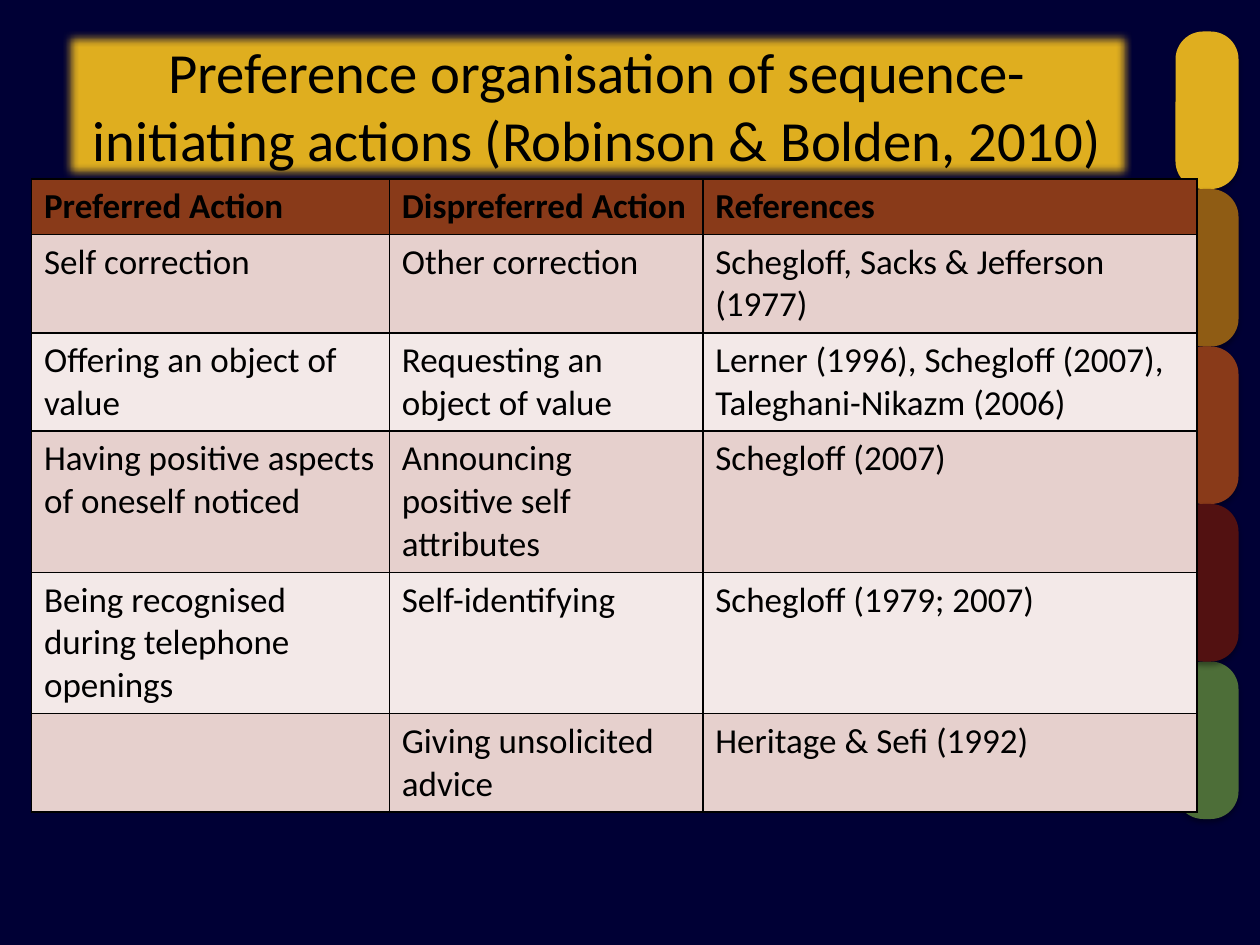
from dataclasses import dataclass

from lxml import etree
from pptx import Presentation
from pptx.dml.color import RGBColor
from pptx.enum.shapes import MSO_SHAPE
from pptx.enum.text import MSO_ANCHOR, MSO_AUTO_SIZE, PP_ALIGN
from pptx.oxml.ns import qn
from pptx.util import Inches, Pt

ROUNDED = MSO_SHAPE.ROUNDED_RECTANGLE
MIDDLE = MSO_ANCHOR.MIDDLE
NO_AUTOFIT = MSO_AUTO_SIZE.NONE
CENTER = PP_ALIGN.CENTER
TITLE_ONLY = 5
UNIT = 0.25  # inches in one column or row of the page grid


@dataclass(frozen=True)
class Theme:
    font: str = "Calibri"
    title_size: float = 32.4
    table_size: float = 20
    night: str = "000035"
    ink: str = "000000"
    gold: str = "DFAE1F"
    bronze: str = "8F5C14"
    rust: str = "893A19"
    maroon: str = "521111"
    green: str = "4D6E38"
    bands: tuple = ("E6D0CD", "F3E9E8")


THEME = Theme()

TITLE = "Preference organisation of sequence-initiating actions (Robinson & Bolden, 2010)"
COLUMN_SHARES = (0.307, 0.269, 0.424)
# Each row: the number of text lines it holds, then its cells
ACTIONS = [
    (1, ("Preferred Action", "Dispreferred Action", "References")),
    (2, ("Self correction", "Other correction", "Schegloff, Sacks & Jefferson (1977)")),
    (2, ("Offering an object of value", "Requesting an object of value",
         "Lerner (1996), Schegloff (2007), Taleghani-Nikazm (2006)")),
    (3, ("Having positive aspects of oneself noticed",
         "Announcing positive self attributes", "Schegloff (2007)")),
    (3, ("Being recognised during telephone openings", "Self-identifying",
         "Schegloff (1979; 2007)")),
    (2, ("", "Giving unsolicited advice", "Heritage & Sefi (1992)")),
]


def grid_box(column, row, columns, rows):
    return tuple(Inches(UNIT * cells) for cells in (column, row, columns, rows))


def paint(fill, color):
    fill.solid()
    fill.fore_color.rgb = RGBColor.from_string(color)


def add_element(parent, tag, **attributes):
    return etree.SubElement(parent, qn(tag), attributes)


def add_text(para, text, size, bold=False):
    span = para.add_run()
    span.text = text
    span.font.name = THEME.font
    span.font.size = Pt(size)
    span.font.bold = bold
    span.font.color.rgb = RGBColor.from_string(THEME.ink)


def add_soft_shadow(shape):
    effects = add_element(shape._element.spPr, "a:effectLst")
    shadow = add_element(effects, "a:outerShdw", blurRad=str(Pt(3.1)), dist=str(Pt(1.8)),
                         dir="5400000", rotWithShape="0")
    color = add_element(shadow, "a:srgbClr", val=THEME.ink)
    add_element(color, "a:alpha", val="35000")


def add_color_stack(page, box):
    """Stack equal rounded tiles down the box, the lowest one at the back."""
    left, top, width, height = box
    colors = (THEME.gold, THEME.bronze, THEME.rust, THEME.maroon, THEME.green)
    tile_height = height // len(colors)
    tiles = list(enumerate(colors))
    group = page.shapes.add_group_shape()
    for place, color in tiles[-1:] + tiles[:-1]:
        tile = group.shapes.add_shape(ROUNDED, left, top + place * tile_height,
                                      width, tile_height)
        tile.adjustments[0] = 0.44
        paint(tile.fill, color)
        tile.line.fill.background()
        add_soft_shadow(tile)


def fill_title(page, box):
    title = page.shapes.title
    title.left, title.top, title.width, title.height = box
    paint(title.fill, THEME.gold)
    effects = add_element(title._element.spPr, "a:effectLst")
    add_element(effects, "a:softEdge", rad=str(Pt(5)))
    frame = title.text_frame
    frame.word_wrap = True
    frame.auto_size = NO_AUTOFIT
    frame.vertical_anchor = MIDDLE
    para = frame.paragraphs[0]
    para.alignment = CENTER
    add_text(para, TITLE, THEME.title_size)


def add_borders(cell):
    properties = cell._tc.get_or_add_tcPr()
    for side in ("a:lnL", "a:lnR", "a:lnT", "a:lnB"):
        line = add_element(properties, side, w=str(Pt(1)))
        add_element(add_element(line, "a:solidFill"), "a:srgbClr", val=THEME.ink)


def add_action_table(page, box):
    left, top, width, height = box
    padding = Inches(0.1)
    line_height = (height - padding * len(ACTIONS)) // sum(lines for lines, _ in ACTIONS)
    table = page.shapes.add_table(len(ACTIONS), len(COLUMN_SHARES), *box).table
    for column, share in zip(table.columns, COLUMN_SHARES):
        column.width = round(width * share)
    for index, (lines, texts) in enumerate(ACTIONS):
        is_header = index == 0
        table.rows[index].height = lines * line_height + padding
        color = THEME.rust if is_header else THEME.bands[(index - 1) % 2]
        for cell, text in zip(table.rows[index].cells, texts):
            add_borders(cell)
            paint(cell.fill, color)
            if text:
                add_text(cell.text_frame.paragraphs[0], text, THEME.table_size, is_header)


def main():
    deck = Presentation()
    deck.slide_width, deck.slide_height = Inches(10), Inches(7.5)
    page = deck.slides.add_slide(deck.slide_layouts[TITLE_ONLY])
    paint(page.background.fill, THEME.night)
    add_color_stack(page, grid_box(37.32, 1, 2, 25))
    fill_title(page, grid_box(2, 1, 33.92, 4.68))
    add_action_table(page, grid_box(1, 5.68, 37, 20.08))
    # The title sits above the colour stack and below the table
    tree = page.shapes._spTree
    tree.insert(tree.index(page.shapes[-1]._element) - 1, page.shapes.title._element)
    deck.save("out.pptx")


if __name__ == "__main__":
    main()
